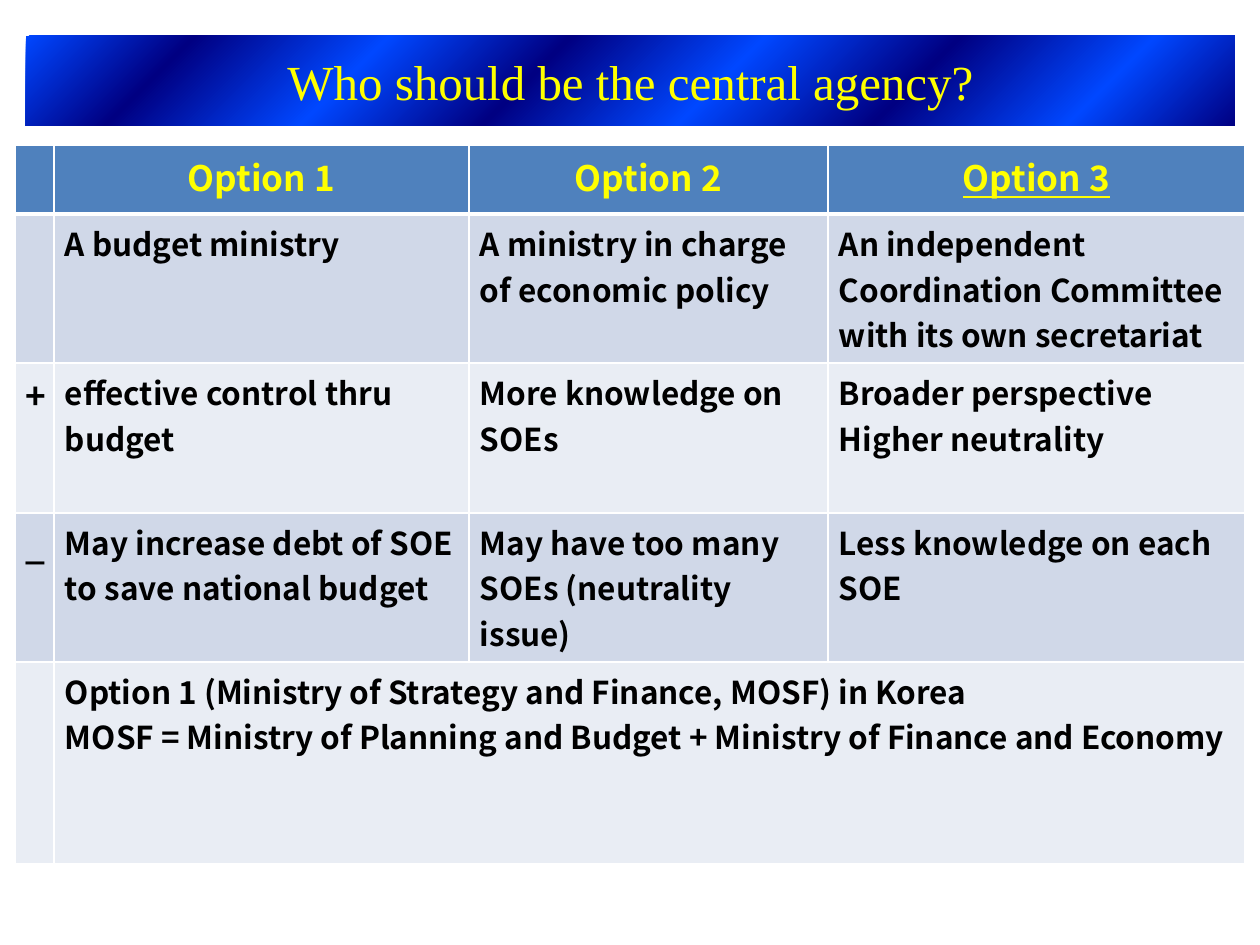
from lxml.etree import SubElement
from pptx import Presentation
from pptx.dml.color import RGBColor
from pptx.enum.shapes import MSO_SHAPE
from pptx.enum.text import MSO_ANCHOR, PP_ALIGN
from pptx.oxml.ns import qn
from pptx.util import Pt

PX = 914400 / 126
NAVY = RGBColor(0x00, 0x00, 0x82)
BRIGHT_BLUE = RGBColor(0x00, 0x47, 0xFF)
YELLOW = RGBColor(0xFF, 0xFF, 0x00)
BLACK = RGBColor(0x00, 0x00, 0x00)
WHITE = RGBColor(0xFF, 0xFF, 0xFF)
HEADER_BLUE = RGBColor(0x4F, 0x81, 0xBD)
BAND_DARK = RGBColor(0xD0, 0xD8, 0xE8)
BAND_LIGHT = RGBColor(0xE9, 0xED, 0xF4)

GRADIENT_STOPS = [0, 13, 28, 43, 58, 72, 87, 100]
COLUMN_WIDTHS = [39, 415, 359, 417]
ROW_HEIGHTS = [69, 149, 150, 149, 202]
OPTIONS = [
    ["", "Option 1", "Option 2", "Option 3"],
    ["", "A budget ministry", "A ministry in charge of economic policy",
     "An independent Coordination Committee with its own secretariat"],
    ["+", "effective control thru budget", "More knowledge on SOEs",
     "Broader perspective\nHigher neutrality"],
    ["_", "May increase debt of SOE to save national budget",
     "May have too many SOEs (neutrality issue)", "Less knowledge on each SOE"],
    ["", "Option 1 (Ministry of Strategy and Finance, MOSF) in Korea\n"
     "MOSF = Ministry of Planning and Budget + Ministry of Finance and Economy", "", ""],
]


def px(length):
    return round(length * PX)


class SlideBuilder:
    """Draw styled elements on the current slide."""

    title_font = "Times New Roman"
    table_font = "Noto Sans CJK KR"

    def __init__(self, slide):
        self.slide = slide

    def add_text(self, frame, text, font, size, color, align, bold=False, underline=False):
        for index, line in enumerate(text.split("\n")):
            paragraph = frame.add_paragraph() if index else frame.paragraphs[0]
            paragraph.alignment = align
            run = paragraph.add_run()
            run.text = line
            run.font.name = font
            run.font.size = Pt(size)
            run.font.bold = bold
            run.font.underline = underline
            run.font.color.rgb = color

    def banner(self, text, left, top, width, height):
        shape = self.slide.shapes.add_shape(
            MSO_SHAPE.RECTANGLE, px(left), px(top), px(width), px(height))
        shape.shadow.inherit = False
        shape.line.fill.background()
        self.gradient(shape)
        shape.text_frame.word_wrap = True
        shape.text_frame.vertical_anchor = MSO_ANCHOR.MIDDLE
        self.add_text(shape.text_frame, text, self.title_font, 28, YELLOW, PP_ALIGN.CENTER)

    def gradient(self, shape):
        shape.fill.gradient()
        gradient = shape._element.spPr.find(qn("a:gradFill"))
        for child in list(gradient):
            gradient.remove(child)
        stops = SubElement(gradient, qn("a:gsLst"))
        for index, position in enumerate(GRADIENT_STOPS):
            stop = SubElement(stops, qn("a:gs"), pos=str(position * 1000))
            color = BRIGHT_BLUE if index % 2 else NAVY
            SubElement(stop, qn("a:srgbClr"), val=str(color))
        circle = SubElement(gradient, qn("a:path"), path="circle")
        SubElement(circle, qn("a:fillToRect"), l="100000", t="100000")

    def borders(self, cell, top, bottom):
        properties = cell._tc.get_or_add_tcPr()
        widths = {"a:lnL": 1, "a:lnR": 1, "a:lnT": top, "a:lnB": bottom}
        for index, (tag, width) in enumerate(widths.items()):
            line = SubElement(properties, qn(tag), w=str(int(Pt(width))))
            fill = SubElement(line, qn("a:solidFill"))
            SubElement(fill, qn("a:srgbClr"), val=str(WHITE))
            properties.insert(index, line)

    def cell(self, cell, text, row, column):
        header = row == 0
        cell.margin_left = cell.margin_right = px(11)
        cell.margin_top = cell.margin_bottom = px(6)
        cell.fill.solid()
        cell.fill.fore_color.rgb = HEADER_BLUE if header else BAND_DARK if row % 2 else BAND_LIGHT
        self.borders(cell, 3 if row == 1 else 1, 3 if header else 1)
        if text:
            centered = header or column == 0
            self.add_text(cell.text_frame, text, self.table_font, 20 if centered else 18,
                          YELLOW if header else BLACK,
                          PP_ALIGN.CENTER if centered else PP_ALIGN.LEFT,
                          bold=True, underline=text == "Option 3")

    def table(self, rows, left, top):
        table = self.slide.shapes.add_table(
            len(rows), len(COLUMN_WIDTHS), px(left), px(top),
            px(sum(COLUMN_WIDTHS)), px(sum(ROW_HEIGHTS))).table
        for column, width in zip(table.columns, COLUMN_WIDTHS):
            column.width = px(width)
        for row, height in zip(table.rows, ROW_HEIGHTS):
            row.height = px(height)
        for row, texts in enumerate(rows):
            for column, text in enumerate(texts):
                self.cell(table.cell(row, column), text, row, column)
        last = len(rows) - 1
        table.cell(last, 1).merge(table.cell(last, 3))


def main():
    presentation = Presentation()
    presentation.slide_width = px(1260)
    presentation.slide_height = px(945)
    slide = presentation.slides.add_slide(presentation.slide_layouts[6])
    builder = SlideBuilder(slide)
    builder.banner("Who should be the central agency?", 26, 36, 1209, 90)
    builder.table(OPTIONS, 15, 145)
    presentation.save("out.pptx")


if __name__ == "__main__":
    main()
